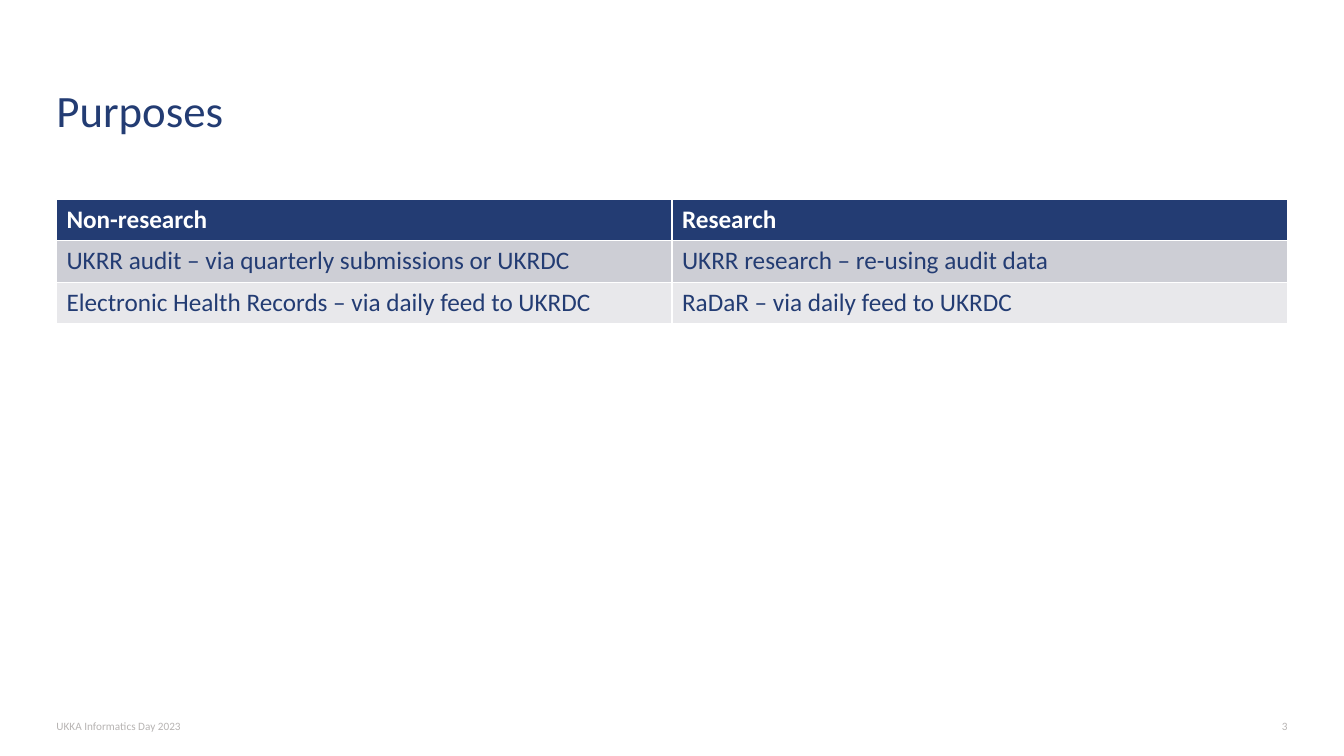
from dataclasses import dataclass

import pptx
import pptx.dml.color
import pptx.enum.text
import pptx.util
from pptx.util import Inches


@dataclass(frozen=True)
class Theme:
    font: str = "Calibri"
    navy: str = "233C73"
    white: str = "FFFFFF"
    muted: str = "B7B4B3"
    bands: tuple = ("CDCED5", "E8E8EB")
    title_size: int = 32
    table_size: int = 18
    footer_size: int = 8


THEME = Theme()
ALIGN = pptx.enum.text.PP_ALIGN
ANCHOR = pptx.enum.text.MSO_ANCHOR
MARGIN = 0.56
CONTENT_WIDTH = 12.21
ROW_HEIGHT = 0.41
PURPOSES = [
    ("Non-research", "Research"),
    ("UKRR audit – via quarterly submissions or UKRDC",
     "UKRR research – re-using audit data"),
    ("Electronic Health Records – via daily feed to UKRDC",
     "RaDaR – via daily feed to UKRDC"),
]


def rgb(value):
    return pptx.dml.color.RGBColor.from_string(value)


def write(frame, text, size, color, bold=False, align=ALIGN.LEFT):
    frame.text = text
    paragraph = frame.paragraphs[0]
    paragraph.alignment = align
    paragraph.font.name = THEME.font
    paragraph.font.size = pptx.util.Pt(size)
    paragraph.font.bold = bold
    paragraph.font.color.rgb = rgb(color)


def clear_insets(frame):
    frame.margin_left = frame.margin_right = 0
    frame.margin_top = frame.margin_bottom = 0
    frame.word_wrap = True


def set_title(slide, text):
    title = slide.shapes.title
    title.left, title.top = Inches(MARGIN), Inches(0.4)
    title.width, title.height = Inches(10.43), Inches(1.38)
    clear_insets(title.text_frame)
    title.text_frame.vertical_anchor = ANCHOR.MIDDLE
    write(title.text_frame, text, THEME.title_size, THEME.navy)


def add_footer(slide, text, left, width, align=ALIGN.LEFT):
    footer = slide.shapes.add_textbox(
        Inches(left), Inches(7.14), Inches(width), Inches(0.13))
    clear_insets(footer.text_frame)
    write(footer.text_frame, text, THEME.footer_size, THEME.muted, align=align)


def add_purposes_table(slide, rows):
    table = slide.shapes.add_table(
        len(rows), len(rows[0]), Inches(MARGIN), Inches(1.98),
        Inches(CONTENT_WIDTH), Inches(ROW_HEIGHT * len(rows))).table
    for row_index, row in enumerate(rows):
        is_header = row_index == 0
        fill = THEME.navy if is_header else THEME.bands[(row_index - 1) % 2]
        color = THEME.white if is_header else THEME.navy
        for column_index, purpose in enumerate(row):
            cell = table.cell(row_index, column_index)
            cell.fill.solid()
            cell.fill.fore_color.rgb = rgb(fill)
            write(cell.text_frame, purpose, THEME.table_size, color, is_header)


def main():
    deck = pptx.Presentation()
    deck.slide_width, deck.slide_height = Inches(13.33), Inches(7.5)
    slide = deck.slides.add_slide(deck.slide_layouts.get_by_name("Title Only"))
    set_title(slide, "Purposes")
    add_purposes_table(slide, PURPOSES)
    add_footer(slide, "UKKA Informatics Day 2023", MARGIN, 9.84)
    add_footer(slide, "3", 12.38, 0.39, ALIGN.RIGHT)
    deck.save("out.pptx")


if __name__ == "__main__":
    main()
